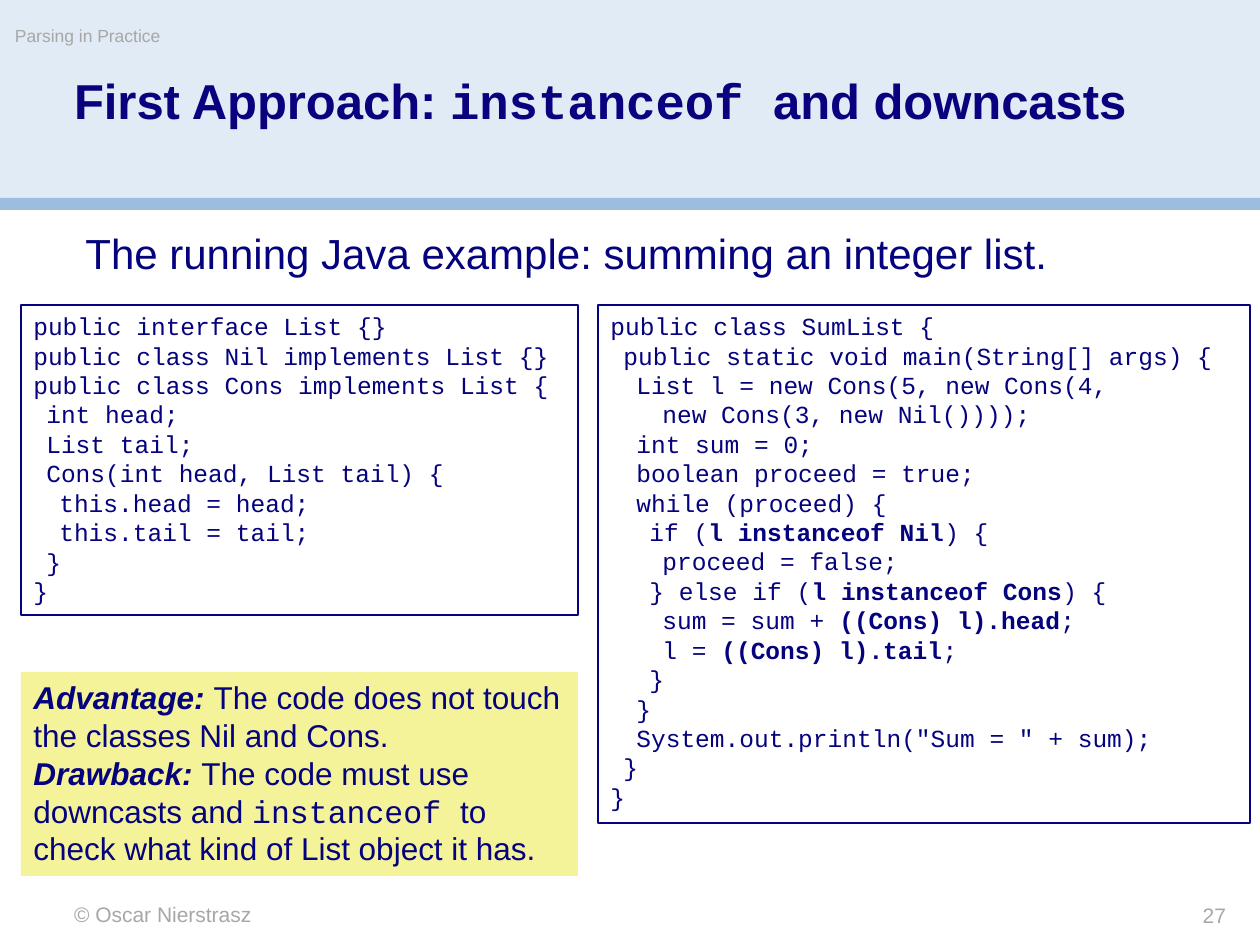
from lxml.etree import SubElement as Sub
from pptx import Presentation
from pptx.dml.color import RGBColor as Rgb
from pptx.enum.shapes import MSO_SHAPE as Kind
from pptx.enum.text import MSO_ANCHOR as Anchor, PP_ALIGN as Align
from pptx.oxml.ns import qn
from pptx.util import Emu, Pt

SCALE = 914400 / 126  # EMU in one px
TAB = 13  # px for each code indent
SANS, MONO = "Arial", "Courier New"
HEX = {"head": "E1EBF5", "band": "9CBDDE", "title": "0A017F",
       "ink": "05027D", "grey": "A7A7A7", "note": "F5F399"}

# Between asterisks the code is bold; \v breaks a line
LIST = """public interface List {}
public class Nil implements List {}
public class Cons implements List {
\tint head;
\tList tail;
\tCons(int head, List tail) {
\t\tthis.head = head;
\t\tthis.tail = tail;
\t}
}"""
SUM = """public class SumList {
\tpublic static void main(String[] args) {
\t\tList l = new Cons(5, new Cons(4,\v\t\t\t\tnew Cons(3, new Nil())));
\t\tint sum = 0;
\t\tboolean proceed = true;
\t\twhile (proceed) {
\t\t\tif (*l instanceof Nil*) {
\t\t\t\tproceed = false;
\t\t\t} else if (*l instanceof Cons*) {
\t\t\t\tsum = sum + *((Cons) l).head*;
\t\t\t\tl = *((Cons) l).tail*;
\t\t\t}
\t\t}
\t\tSystem.out.println("Sum = " + sum);
\t}
}"""


def px(n):
    return Emu(round(n * SCALE))


def rgb(name):
    return Rgb.from_string(HEX[name])


def style(para, size, ink, face=SANS):
    font = para.font
    font.size, font.name = Pt(size), face
    font.color.rgb = rgb(ink)
    para.alignment = Align.LEFT


def add_run(para, text, **look):
    """Add a run, with a line break at each \\v."""
    for i, part in enumerate(text.split("\v")):
        if i:
            para.add_line_break()
        run = para.add_run()
        run.text = part
        for key, val in look.items():
            setattr(run.font, key, val)


def flush(frame):
    """Drop the inner margins."""
    frame.margin_left = frame.margin_right = 0
    frame.margin_top = frame.margin_bottom = 0


def set_tabs(para):
    stops = Sub(para._p.get_or_add_pPr(), qn("a:tabLst"))
    for i in range(1, 6):
        Sub(stops, qn("a:tab"), pos=str(px(TAB * i)), algn="l")


def add_rect(slide, box, fill=None, line=None):
    shape = slide.shapes.add_shape(Kind.RECTANGLE, *map(px, box))
    shape.shadow.inherit = False
    if fill:
        shape.fill.solid()
        shape.fill.fore_color.rgb = rgb(fill)
    else:
        shape.fill.background()
    if line:
        shape.line.color.rgb = rgb(line)
        shape.line.width = Pt(0.75)
    else:
        shape.line.fill.background()
    frame = shape.text_frame
    frame.word_wrap, frame.vertical_anchor = True, Anchor.TOP
    return frame


def add_label(slide, box, text, size, ink, align=Align.LEFT, pad=False):
    frame = slide.shapes.add_textbox(*map(px, box)).text_frame
    frame.word_wrap = True
    if not pad:
        flush(frame)
    para = frame.paragraphs[0]
    style(para, size, ink)
    para.alignment = align
    add_run(para, text)


def add_code(slide, box, code):
    frame = add_rect(slide, box, line="ink")
    for i, row in enumerate(code.split("\n")):
        para = frame.add_paragraph() if i else frame.paragraphs[0]
        style(para, 14, "ink", MONO)
        set_tabs(para)
        for j, part in enumerate(row.split("*")):
            add_run(para, part, **({"bold": True} if j % 2 else {}))


def add_note(slide, box):
    frame = add_rect(slide, box, fill="note")
    pro, con = frame.paragraphs[0], frame.add_paragraph()
    for para, lead in ((pro, "Advantage: "), (con, "Drawback: ")):
        style(para, 18, "ink")
        add_run(para, lead, bold=True, italic=True)
    add_run(pro, "The code does not touch the classes Nil and Cons.")
    add_run(con, "The code must use downcasts and ")
    add_run(con, "instanceof ", name=MONO)
    add_run(con, "to check what kind of List object it has.")


def set_title(slide, box):
    title = slide.shapes.title
    title.left, title.top, title.width, title.height = map(px, box)
    frame = title.text_frame
    flush(frame)
    frame.word_wrap, frame.vertical_anchor = True, Anchor.TOP
    para = frame.paragraphs[0]
    style(para, 28, "title")
    para.font.bold, para.line_spacing = True, 0.9
    add_run(para, "First Approach: ")
    add_run(para, "instanceof ", name=MONO)
    add_run(para, "and downcasts")
    slide.shapes._spTree.append(title._element)  # above the bands


def main():
    prs = Presentation()
    prs.slide_width, prs.slide_height = px(1260), px(945)
    slide = prs.slides.add_slide(prs.slide_layouts[5])

    # Header
    add_rect(slide, (0, 0, 1260, 199), fill="head")
    add_rect(slide, (0, 198, 1260, 12), fill="band")
    set_title(slide, (74, 77, 1113, 112))
    add_label(slide, (15, 25, 743, 35), "Parsing in Practice", 10, "grey")

    # Content
    add_label(slide, (73, 221, 1155, 64),
              "The running Java example: summing an integer list.",
              24, "ink", pad=True)
    add_code(slide, (21, 305, 557, 310), LIST)
    add_code(slide, (598, 305, 652, 518), SUM)
    add_note(slide, (21, 672, 557, 204))

    # Footer
    add_label(slide, (74, 902, 525, 25), "© Oscar Nierstrasz", 12, "grey")
    add_label(slide, (1040, 903, 186, 25), "27", 12, "grey", Align.RIGHT)

    prs.save("out.pptx")


if __name__ == "__main__":
    main()
